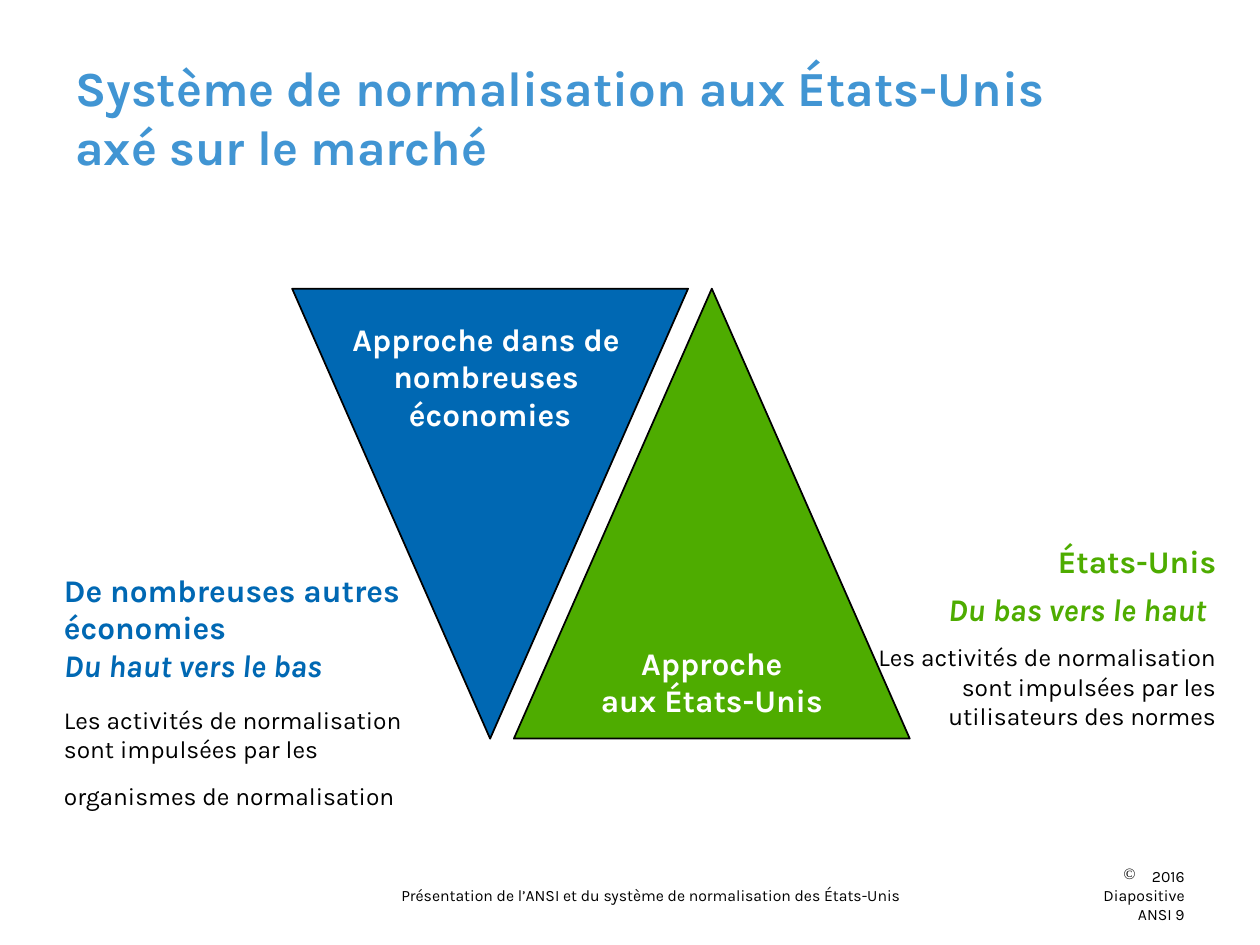
from dataclasses import dataclass

from lxml import etree
from pptx import Presentation, util as u
from pptx.dml.color import RGBColor
from pptx.enum import shapes, text
from pptx.oxml.ns import qn

Cm, Pt = u.Cm, u.Pt
LEFT, CENTER, RIGHT = text.PP_ALIGN.LEFT, text.PP_ALIGN.CENTER, text.PP_ALIGN.RIGHT
TOP, MIDDLE = text.MSO_ANCHOR.TOP, text.MSO_ANCHOR.MIDDLE


@dataclass(frozen=True)
class Theme:
    font: str = "Karla"
    title: str = "4195D3"
    blue: str = "0068B3"
    green: str = "4EAC00"
    black: str = "000000"
    white: str = "FFFFFF"
    title_size: int = 28
    spacer_size: int = 24
    heading_size: int = 18
    body_size: int = 14
    footer_size: int = 9


THEME = Theme()


@dataclass(frozen=True)
class Box:
    left: float
    top: float
    width: float
    height: float

    def lengths(self) -> tuple:
        return Cm(self.left), Cm(self.top), Cm(self.width), Cm(self.height)


@dataclass(frozen=True)
class Run:
    words: str
    size: int
    color: str = THEME.black
    bold: bool = False
    italic: bool = False


@dataclass(frozen=True)
class Triangle:
    box: Box
    color: str
    rotation: int = 0


def add_run(paragraph, run: Run) -> None:
    for index, line in enumerate(run.words.split("\n")):
        if index:
            paragraph.add_line_break()
        if line:
            piece = paragraph.add_run()
            piece.text = line
            font = piece.font
            font.name, font.size = THEME.font, Pt(run.size)
            font.bold, font.italic = run.bold, run.italic
            font.color.rgb = RGBColor.from_string(run.color)


def add_bullet(paragraph, symbol: str) -> None:
    properties = paragraph._p.get_or_add_pPr()
    properties.set("marL", str(Cm(0.5)))
    properties.set("indent", str(-Cm(0.5)))
    etree.SubElement(properties, qn("a:buChar")).set("char", symbol)


def add_text(slide, box: Box, paragraphs: list[list[Run]], *, align=LEFT,
             anchor=TOP, space_before: int = 0, bullet: str = "") -> None:
    frame = slide.shapes.add_textbox(*box.lengths()).text_frame
    frame.word_wrap = True
    frame.vertical_anchor = anchor
    for index, runs in enumerate(paragraphs):
        paragraph = frame.add_paragraph() if index else frame.paragraphs[0]
        paragraph.alignment = align
        if index:
            paragraph.space_before = Pt(space_before)
        if bullet:
            add_bullet(paragraph, bullet)
        for run in runs:
            add_run(paragraph, run)


def add_triangle(slide, triangle: Triangle) -> None:
    shape = slide.shapes.add_shape(
        shapes.MSO_SHAPE.FLOWCHART_EXTRACT, *triangle.box.lengths())
    shape.rotation = triangle.rotation
    shape.shadow.inherit = False
    shape.fill.solid()
    shape.fill.fore_color.rgb = RGBColor.from_string(triangle.color)
    shape.line.color.rgb = RGBColor.from_string(THEME.black)
    shape.line.width = Pt(1)


def heading(words: str, color: str, italic: bool = False) -> Run:
    return Run(words, THEME.heading_size, color, bold=True, italic=italic)


def body(words: str) -> Run:
    return Run(words, THEME.body_size)


def footer(words: str) -> Run:
    return Run(words, THEME.footer_size)


def main() -> None:
    presentation = Presentation()
    presentation.slide_width, presentation.slide_height = Cm(25.4), Cm(19.05)
    slide = presentation.slides.add_slide(presentation.slide_layouts[6])
    spacer = Run(" ", THEME.spacer_size)

    add_text(slide, Box(21.39, 17.35, 2.74, 1.27),
             [[footer(" 2016 Diapositive ANSI 9")]], align=RIGHT, bullet="©")
    add_text(slide, Box(5.28, 17.73, 15.67, 0.69),
             [[footer("Présentation de l’ANSI et du système de normalisation des États-Unis")]],
             align=CENTER)
    add_text(slide, Box(1.27, 0.76, 22.86, 3.18),
             [[Run("Système de normalisation aux États-Unis\naxé sur le marché",
                   THEME.title_size, THEME.title, bold=True)]], anchor=MIDDLE)

    for triangle in (
        Triangle(Box(5.89, 5.82, 7.98, 9.07), THEME.blue, rotation=180),
        Triangle(Box(10.36, 5.82, 7.98, 9.07), THEME.green),
    ):
        add_triangle(slide, triangle)

    add_text(slide, Box(5.84, 6.32, 8.08, 2.57),
             [[heading("Approche dans de \nnombreuses ", THEME.white)],
              [heading("économies", THEME.white)]], align=CENTER)
    add_text(slide, Box(10.36, 12.85, 7.98, 1.78),
             [[heading("Approche\naux États-Unis", THEME.white)]], align=CENTER)

    add_text(slide, Box(1.04, 11.38, 7.49, 3.25),
             [[heading("De nombreuses autres économies\n", THEME.blue),
               heading("Du haut vers le bas", THEME.blue, italic=True)],
              [body("Les activités de normalisation sont impulsées par les "
                    "organismes de normalisation"), spacer]],
             space_before=12)
    add_text(slide, Box(17.4, 10.8, 7.37, 3.25),
             [[heading("États-Unis\n", THEME.green), spacer,
               heading("Du bas vers le haut", THEME.green, italic=True), spacer],
              [body("Les activités de normalisation sont impulsées par les "
                    "utilisateurs des normes")]],
             align=RIGHT, space_before=7)

    presentation.save("out.pptx")


if __name__ == "__main__":
    main()
